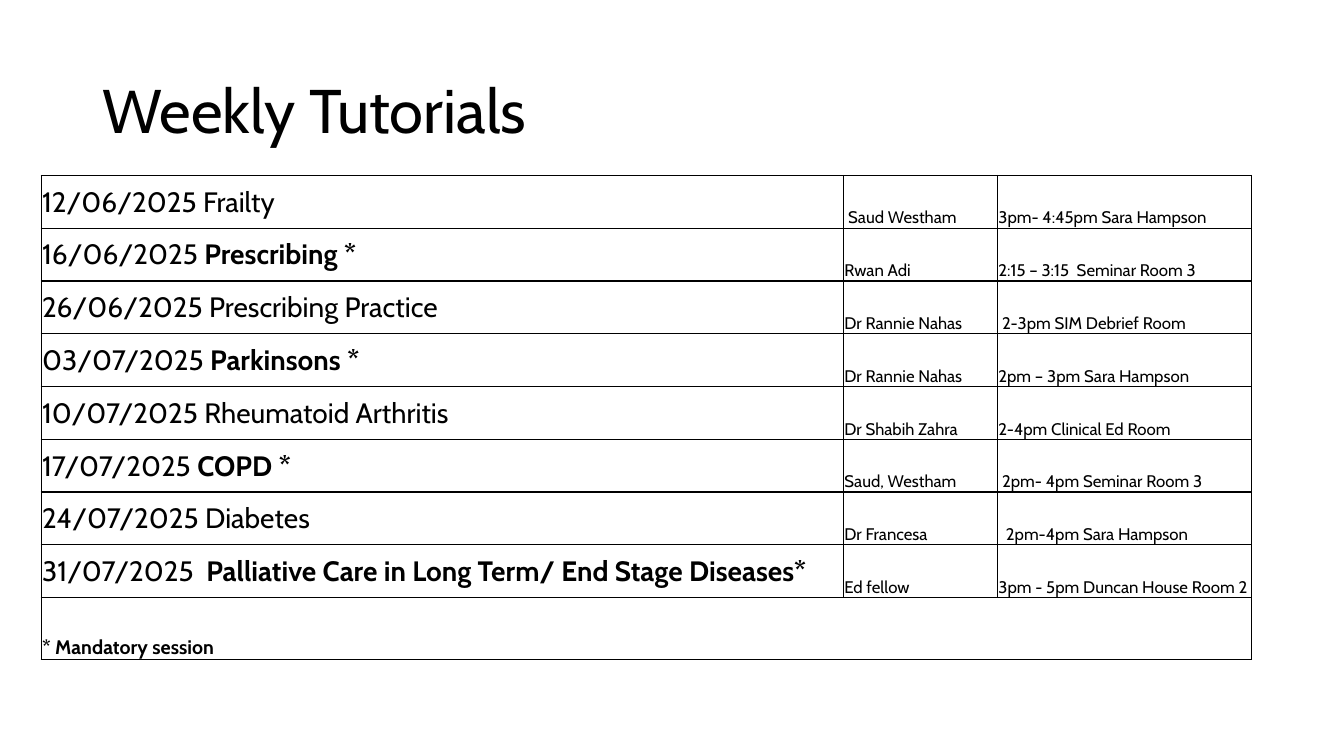
from lxml.etree import SubElement
from pptx import Presentation
from pptx.dml.color import RGBColor
from pptx.enum.text import MSO_VERTICAL_ANCHOR as Anchor
from pptx.oxml.ns import qn
from pptx.util import Cm, Pt

BLACK = RGBColor(0, 0, 0)
WHITE = RGBColor(255, 255, 255)
FONT_NAME = "Cabin"
TITLE_SIZE, TOPIC_SIZE, DETAIL_SIZE, NOTE_SIZE = Pt(44), Pt(20), Pt(12), Pt(14)

TITLE_BOX = {"left": Cm(2.33), "top": Cm(1.01), "width": Cm(29.21), "height": Cm(3.68)}
TABLE_LEFT, TABLE_TOP = Cm(1.04), Cm(4.42)
COLUMN_WIDTHS = [Cm(20.22), Cm(3.88), Cm(6.4)]
SESSION_HEIGHT, NOTE_HEIGHT = Cm(1.33), Cm(1.56)
CELL_MARGINS = {
    "margin_left": Cm(0.02),
    "margin_right": Cm(0.02),
    "margin_top": Cm(0.02),
    "margin_bottom": Cm(0),
}
PLAIN_TABLE = {"first_row": False, "horz_banding": False}

SESSIONS = [
    ("12/06/2025 Frailty", "", " Saud Westham", "3pm- 4:45pm Sara Hampson"),
    ("16/06/2025 ", "Prescribing *", "Rwan Adi", "2:15 – 3:15  Seminar Room 3"),
    ("26/06/2025 Prescribing Practice", "", "Dr Rannie Nahas", " 2-3pm SIM Debrief Room"),
    ("03/07/2025 ", "Parkinsons *", "Dr Rannie Nahas", "2pm – 3pm Sara Hampson"),
    ("10/07/2025 Rheumatoid Arthritis", "", "Dr Shabih Zahra", "2-4pm Clinical Ed Room"),
    ("17/07/2025 ", "COPD *", "Saud, Westham", " 2pm- 4pm Seminar Room 3"),
    ("24/07/2025 Diabetes", "", "Dr Francesa", "  2pm-4pm Sara Hampson"),
    ("31/07/2025  ", "Palliative Care in Long Term/ End Stage Diseases*",
     "Ed fellow", "3pm - 5pm Duncan House Room 2"),
]
NOTE = "* Mandatory session"


def set_attributes(target, values):
    """Set each attribute of the target from a dict of format values."""
    for name, value in values.items():
        setattr(target, name, value)


def add_run(paragraph, text, size, bold=False):
    """Add a formatted run to the paragraph."""
    run = paragraph.add_run()
    run.text = text
    set_attributes(run.font, {"name": FONT_NAME, "size": size, "bold": bold})
    run.font.color.rgb = BLACK


def add_borders(cell):
    """Draw a thin black line on all four sides of the cell."""
    properties = cell._tc.get_or_add_tcPr()
    for position, side in enumerate(("lnL", "lnR", "lnT", "lnB")):
        line = SubElement(properties, qn(f"a:{side}"), w=str(Pt(1)))
        fill = SubElement(line, qn("a:solidFill"))
        SubElement(fill, qn("a:srgbClr"), val=str(BLACK))
        properties.insert(position, line)


def format_cell(cell):
    """Give the cell its fill, margins and borders."""
    cell.fill.solid()
    cell.fill.fore_color.rgb = WHITE
    set_attributes(cell, {**CELL_MARGINS, "vertical_anchor": Anchor.BOTTOM})
    add_borders(cell)


def fill_session(table, row, session):
    """Write the date, topic, tutor and place of one session."""
    date, mandatory_topic, *details = session
    topic_cell = table.cell(row, 0)
    topic_cell.vertical_anchor = Anchor.MIDDLE
    paragraph = topic_cell.text_frame.paragraphs[0]
    add_run(paragraph, date, TOPIC_SIZE)
    if mandatory_topic:
        add_run(paragraph, mandatory_topic, TOPIC_SIZE, bold=True)
    for column, detail in enumerate(details, start=1):
        add_run(table.cell(row, column).text_frame.paragraphs[0], detail, DETAIL_SIZE)


def add_title(slide, text):
    """Place and format the title placeholder."""
    title = slide.shapes.title
    set_attributes(title, TITLE_BOX)
    title.text_frame.vertical_anchor = Anchor.MIDDLE
    paragraph = title.text_frame.paragraphs[0]
    set_attributes(paragraph, {"alignment": 1, "line_spacing": 0.9})
    add_run(paragraph, text, TITLE_SIZE)


def add_timetable(slide):
    """Add the table of sessions with its closing note."""
    note_row = len(SESSIONS)
    heights = [SESSION_HEIGHT] * note_row + [NOTE_HEIGHT]
    table = slide.shapes.add_table(
        len(heights), len(COLUMN_WIDTHS), TABLE_LEFT, TABLE_TOP,
        sum(COLUMN_WIDTHS), sum(heights),
    ).table
    set_attributes(table, PLAIN_TABLE)
    for column, width in zip(table.columns, COLUMN_WIDTHS):
        column.width = width
    for row, height in zip(table.rows, heights):
        row.height = height
    for cell in table.iter_cells():
        format_cell(cell)
    for row, session in enumerate(SESSIONS):
        fill_session(table, row, session)
    note_cell = table.cell(note_row, 0)
    note_cell.merge(table.cell(note_row, len(COLUMN_WIDTHS) - 1))
    add_run(note_cell.text_frame.paragraphs[0], NOTE, NOTE_SIZE, bold=True)


def main():
    """Build the tutorial timetable slide."""
    presentation = Presentation()
    set_attributes(presentation, {"slide_width": Cm(33.87), "slide_height": Cm(19.05)})
    slide = presentation.slides.add_slide(presentation.slide_layouts[5])
    add_title(slide, "Weekly Tutorials")
    add_timetable(slide)
    presentation.save("out.pptx")


if __name__ == "__main__":
    main()
